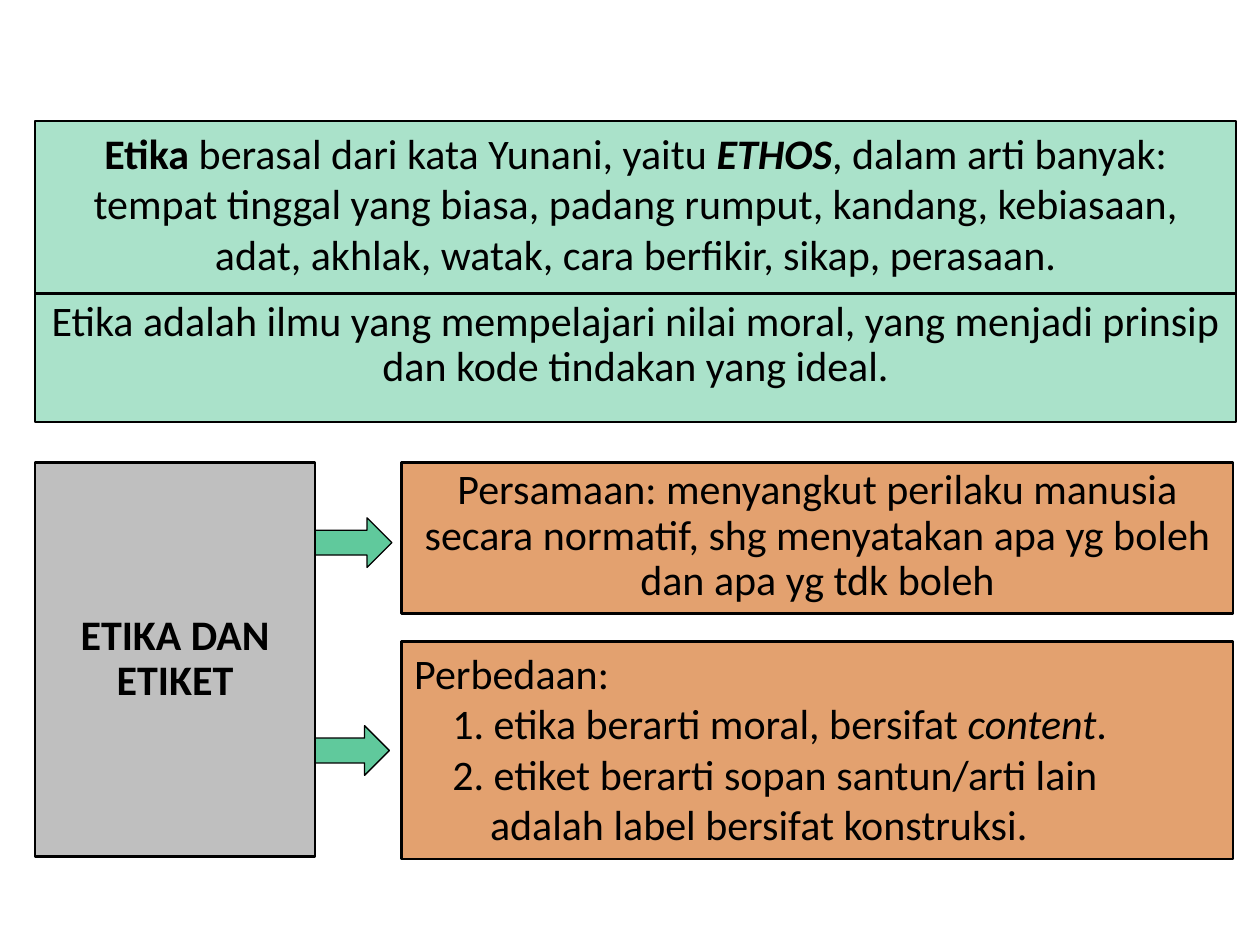
import pptx
import pptx.util
from pptx.dml.color import RGBColor
from pptx.enum.shapes import MSO_SHAPE
from pptx.enum.text import MSO_ANCHOR, PP_ALIGN

Cm, Pt = pptx.util.Cm, pptx.util.Pt

COLORS = {
    "ink": "000000",
    "mint": "AAE2CA",
    "green": "60C99C",
    "grey": "BFBFBF",
    "orange": "E3A16F",
}


def add_block(slide, kind, box, color, line_width):
    """Add a filled, outlined shape; box is left, top, width, height in cm."""
    sp = slide.shapes.add_shape(kind, *(Cm(v) for v in box))
    sp.shadow.inherit = False
    sp.fill.solid()
    sp.fill.fore_color.rgb = RGBColor.from_string(COLORS[color])
    sp.line.color.rgb = RGBColor.from_string(COLORS["ink"])
    sp.line.width = Pt(line_width)
    return sp


def add_panel(slide, box, color, paragraphs, align=PP_ALIGN.CENTER,
              spacing=None, anchor=MSO_ANCHOR.TOP, indents=()):
    """Add a text panel; each paragraph is a list of (text, style) runs."""
    sp = add_block(slide, MSO_SHAPE.RECTANGLE, box, color, 1.5)
    tf = sp.text_frame
    tf.word_wrap = True
    tf.vertical_anchor = anchor
    for i, runs in enumerate(paragraphs):
        p = tf.paragraphs[0] if i == 0 else tf.add_paragraph()
        p.alignment = align
        if spacing:
            p.line_spacing = spacing
        if indents:
            p._p.get_or_add_pPr().set("marL", str(Cm(indents[i])))
        for text, style in runs:
            r = p.add_run()
            r.text = text
            r.font.name = "Calibri"
            r.font.size = Pt(24)
            r.font.bold = "b" in style
            r.font.italic = "i" in style
            r.font.color.rgb = RGBColor.from_string(COLORS["ink"])


def add_definitions(slide, left, top, width):
    """Two stacked panels: origin of the word and its meaning."""
    add_panel(slide, (left, top, width, 3.61), "mint", [[
        ("Etika", "b"),
        (" berasal dari kata Yunani, yaitu ", ""),
        ("ETHOS", "bi"),
        (", dalam arti banyak: tempat tinggal yang biasa, padang rumput, "
         "kandang, kebiasaan, adat, akhlak, watak, cara berfikir, sikap, "
         "perasaan.", ""),
    ]])
    add_panel(slide, (left, top + 3.48, width, 2.59), "mint", [
        [("Etika adalah ilmu yang mempelajari nilai moral, "
          "yang menjadi prinsip", "")],
        [("dan kode tindakan yang ideal.", "")],
    ], spacing=0.9)


def add_comparison(slide, left, top, width, height):
    """Topic panel with arrows to the similarity and difference panels."""
    topic_w, detail_x = 5.64, 7.39
    detail_left, detail_w = left + detail_x, width - detail_x

    # Arrows, tucked slightly under the topic panel
    for dx, dy in ((5.54, 5.31), (5.59, 1.12)):
        add_block(slide, MSO_SHAPE.RIGHT_ARROW,
                  (left + dx, top + dy, 1.6, 1), "green", 0.75)

    # Topic
    add_panel(slide, (left, top, topic_w, height), "grey",
              [[("ETIKA DAN ETIKET", "b")]],
              spacing=0.9, anchor=MSO_ANCHOR.MIDDLE)

    # Similarity
    add_panel(slide, (detail_left, top, detail_w, 3.05), "orange", [[
        ("Persamaan: menyangkut perilaku manusia secara normatif, "
         "shg menyatakan apa yg boleh dan apa yg tdk boleh", ""),
    ]], spacing=0.9)

    # Differences
    add_panel(slide, (detail_left, top + 3.61, detail_w, 4.39), "orange", [
        [("Perbedaan:", "")],
        [("1. etika berarti moral, bersifat ", ""), ("content", "i"), (".", "")],
        [("2. etiket berarti sopan santun/arti lain", "")],
        [("adalah label bersifat konstruksi.", "")],
    ], align=PP_ALIGN.LEFT, indents=(0, 0.77, 0.77, 1.53))


def main():
    prs = pptx.Presentation()
    prs.slide_width, prs.slide_height = Cm(25.4), Cm(19.05)
    s = prs.slides.add_slide(prs.slide_layouts[6])
    add_definitions(s, 0.71, 2.44, 24.21)
    add_comparison(s, 0.71, 9.32, 24.15, 7.95)
    prs.save("out.pptx")


if __name__ == "__main__":
    main()
